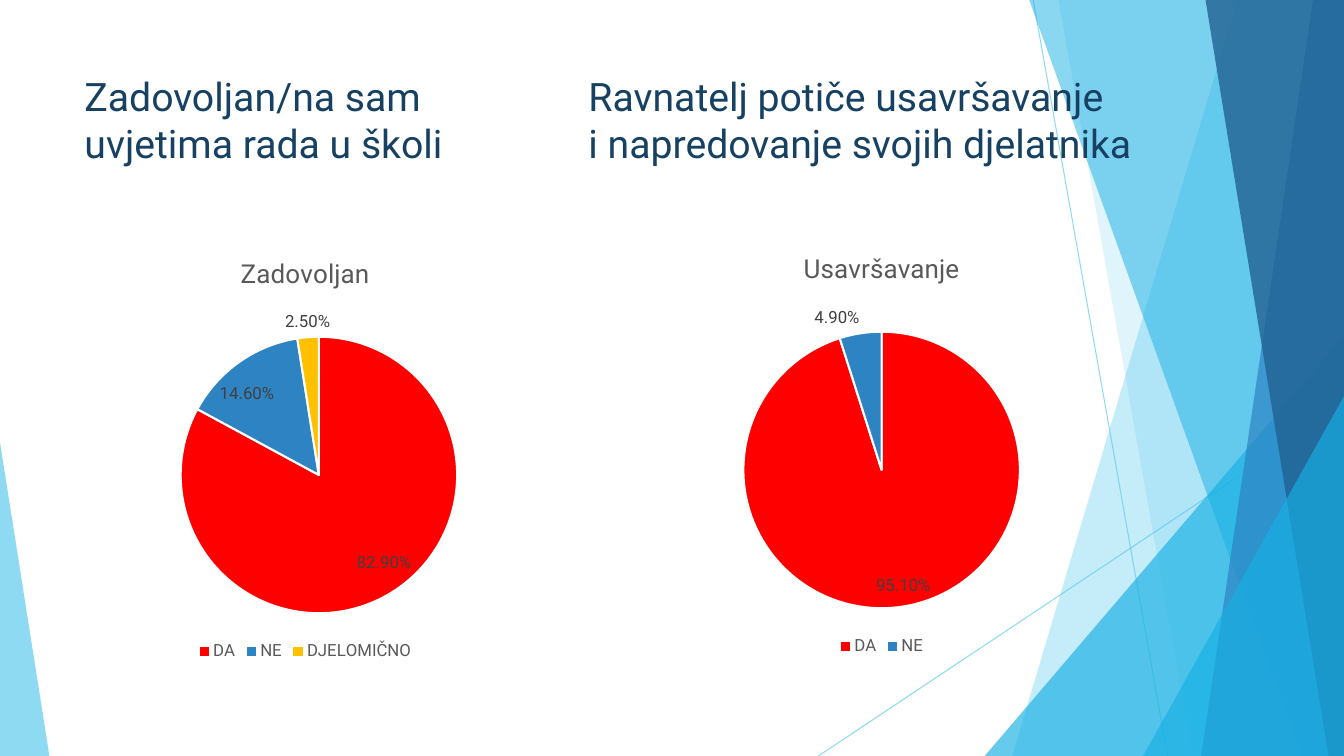
import pptx
import pptx.chart.data
import pptx.dml.color
import pptx.enum.chart
import pptx.enum.shapes
import pptx.enum.text
import pptx.oxml
import pptx.oxml.ns
import pptx.util

Pt = pptx.util.Pt
qn = pptx.oxml.ns.qn
COLORS = {
    "sky": "5FCBEF", "cyan": "17B0E4", "blue": "2E83C3", "navy": "226292",
    "title": "174162", "red": "FF0000", "amber": "FFC000", "white": "FFFFFF",
    "gray": "595959", "label": "404040",
}
FONT = "Roboto"
WIDTH, HEIGHT = 960, 540


def paint(color_format, name, opacity=100):
    color_format.rgb = pptx.dml.color.RGBColor.from_string(COLORS[name])
    if opacity < 100:
        color = color_format._xFill.find(qn("a:srgbClr"))
        color.makeelement(qn("a:alpha"))
        alpha = pptx.oxml.parse_xml(
            f'<a:alpha {pptx.oxml.ns.nsdecls("a")} val="{opacity * 1000}"/>')
        color.append(alpha)


def style_font(font, size, color):
    for name, value in {"name": FONT, "size": Pt(size), "bold": False}.items():
        setattr(font, name, value)
    paint(font.color, color)


presentation = pptx.Presentation()
presentation.slide_width = Pt(WIDTH)
presentation.slide_height = Pt(HEIGHT)
slide = presentation.slides.add_slide(presentation.slide_layouts[6])
shapes = slide.shapes

for ends in [(738, 0, 834, HEIGHT), (WIDTH, 290, 584.6, HEIGHT)]:
    line = shapes.add_connector(
        pptx.enum.shapes.MSO_CONNECTOR.STRAIGHT, *[Pt(value) for value in ends])
    line.line.width = Pt(0.75)
    line.line.fill.solid()
    paint(line.line.fill.fore_color, "sky")
    color = next(line._element.spPr.iter(qn("a:srgbClr")))
    color.append(pptx.oxml.parse_xml(
        f'<a:alpha {pptx.oxml.ns.nsdecls("a")} val="70000"/>'))
    line._element.spPr.append(pptx.oxml.parse_xml(
        f'<a:effectLst {pptx.oxml.ns.nsdecls("a")}/>'))

facets = [
    ("band", (884, 723), "sky", 36),
    ("band", (756, 852), "sky", 20),
    ("triangle", (703.4, 239.8, 256.6, 1), "cyan", 66),
    ("band", (735, 929.5), "cyan", 50),
    ("band", (938, 858), "blue", 70),
    ("band", (861, 949), "navy", 80),
    ("triangle", (816.5, 283, 143.5, 1), "cyan", 66),
    ("triangle", (0, 316, 35.3, 0), "sky", 70),
]
for kind, geometry, color_name, opacity in facets:
    if kind == "band":
        top_x, bottom_x = geometry
        builder = shapes.build_freeform(Pt(top_x), Pt(-0.6))
        builder.add_line_segments([
            (Pt(WIDTH), Pt(-0.6)), (Pt(WIDTH), Pt(HEIGHT)), (Pt(bottom_x), Pt(HEIGHT))])
        shape = builder.convert_to_shape()
    else:
        left, top, width, apex = geometry
        shape = shapes.add_shape(
            pptx.enum.shapes.MSO_SHAPE.ISOSCELES_TRIANGLE,
            Pt(left), Pt(top), Pt(width), Pt(HEIGHT - top))
        shape.adjustments[0] = apex
    shape.shadow.inherit = False
    shape.line.fill.background()
    shape.fill.solid()
    paint(shape.fill.fore_color, color_name)
    color = next(shape._element.spPr.iter(qn("a:srgbClr")))
    color.append(pptx.oxml.parse_xml(
        f'<a:alpha {pptx.oxml.ns.nsdecls("a")} val="{opacity * 1000}"/>'))

title = shapes.add_textbox(Pt(53.3), Pt(48.2), Pt(823), Pt(103.7))
title.text_frame.word_wrap = True
title.text_frame.vertical_anchor = pptx.enum.text.MSO_ANCHOR.TOP
paragraph = title.text_frame.paragraphs[0]
paragraph.text = ("Zadovoljan/na sam\tRavnatelj potiče usavršavanje\v"
                  "uvjetima rada u školi\ti napredovanje svojih djelatnika")
for run in paragraph.runs:
    style_font(run.font, 28, "title")
paragraph._p.get_or_add_pPr().append(pptx.oxml.parse_xml(
    f'<a:tabLst {pptx.oxml.ns.nsdecls("a")}><a:tab pos="{Pt(360)}" algn="l"/></a:tabLst>'))

pies = [
    ("Zadovoljan", 53.3, 169.9, 0.23, {"DA": 0.829, "NE": 0.146, "DJELOMIČNO": 0.025}),
    ("Usavršavanje", 465.1, 166.3, 0.2, {"DA": 0.951, "NE": 0.049}),
]
for name, left, top, plot_x, answers in pies:
    data = pptx.chart.data.CategoryChartData(number_format="0.00%")
    data.categories = list(answers)
    data.add_series(name, list(answers.values()))
    chart = shapes.add_chart(
        pptx.enum.chart.XL_CHART_TYPE.PIE, Pt(left), Pt(top), Pt(329.4), Pt(305.3), data).chart
    chart.font.name = FONT
    chart.font.size = Pt(10)
    chart.has_title = True
    chart.chart_title.text_frame.text = name
    style_font(chart.chart_title.text_frame.paragraphs[0].runs[0].font, 18.6, "gray")
    chart.has_legend = True
    chart.legend.position = pptx.enum.chart.XL_LEGEND_POSITION.BOTTOM
    chart.legend.include_in_layout = False
    style_font(chart.legend.font, 12, "gray")

    plot = chart.plots[0]
    plot.vary_by_categories = True
    plot.has_data_labels = True
    labels = plot.data_labels
    for attribute, value in {
        "show_value": True, "show_percentage": False, "number_format": "0.00%",
        "number_format_is_linked": False,
        "position": pptx.enum.chart.XL_LABEL_POSITION.BEST_FIT,
    }.items():
        setattr(labels, attribute, value)
    style_font(labels.font, 12, "label")
    for index, color_name in zip(range(len(answers)), ["red", "blue", "amber"]):
        point = plot.series[0].points[index]
        point.format.fill.solid()
        paint(point.format.fill.fore_color, color_name)
        point.format.line.width = Pt(1.5)
        paint(point.format.line.color, "white")

    plot_area = chart._chartSpace.chart.plotArea
    for layout in plot_area.findall(qn("c:layout")):
        plot_area.remove(layout)
    frame = "".join(f'<c:{key} val="{value}"/>' for key, value in {
        "layoutTarget": "inner", "xMode": "edge", "yMode": "edge",
        "x": plot_x, "y": 0.23, "w": 0.6, "h": 0.65}.items())
    plot_area.insert(0, pptx.oxml.parse_xml(
        f'<c:layout {pptx.oxml.ns.nsdecls("c")}><c:manualLayout>{frame}'
        '</c:manualLayout></c:layout>'))

presentation.save("out.pptx")
